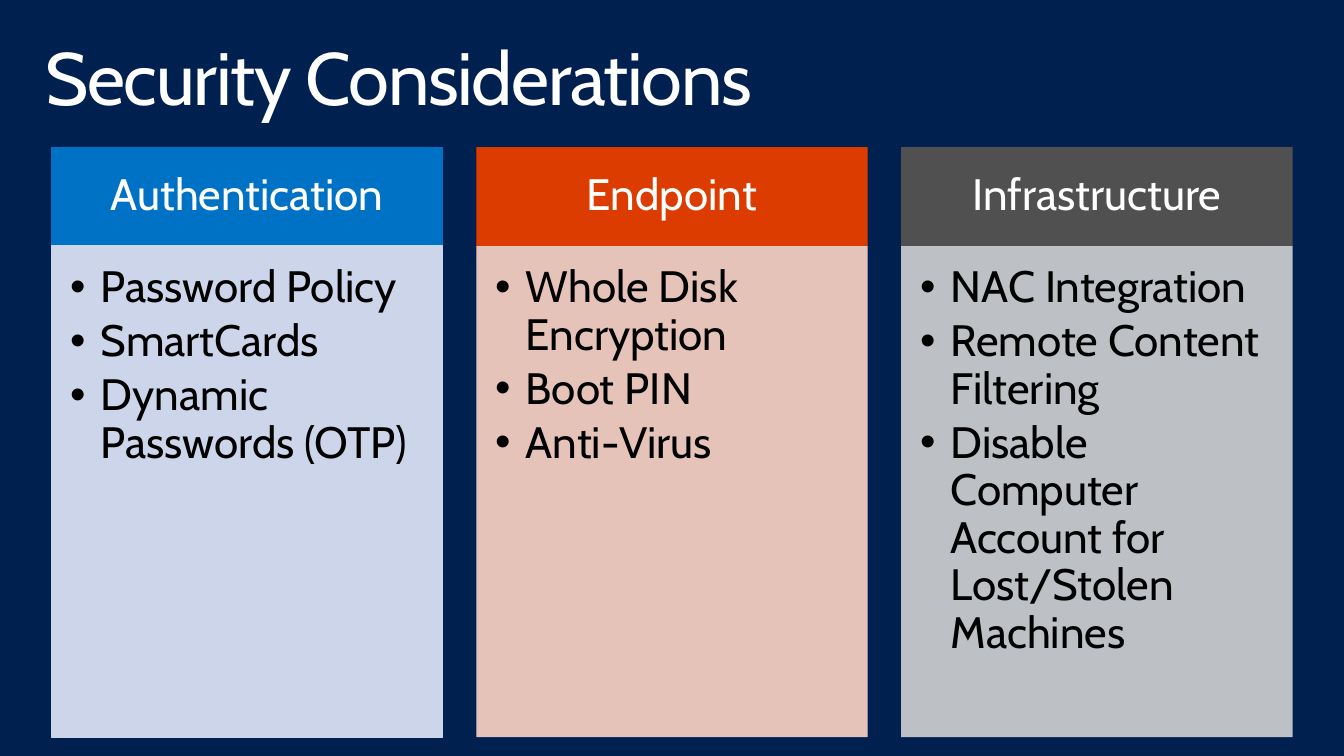
from lxml import etree
from pptx import Presentation
from pptx import util as u
from pptx.dml.color import RGBColor
from pptx.enum import shapes, text
from pptx.oxml.ns import qn

PX = 9144  # 100 px to the inch
FONT = "Cabin"
NAVY = RGBColor(0x00, 0x20, 0x50)
WHITE = RGBColor(0xFF, 0xFF, 0xFF)
BLACK = RGBColor(0x00, 0x00, 0x00)
BLUE = RGBColor(0x00, 0x72, 0xC6)
PALE_BLUE = RGBColor(0xCC, 0xD5, 0xEA)
ORANGE = RGBColor(0xDC, 0x3C, 0x00)
PALE_ORANGE = RGBColor(0xFF, 0xD5, 0xC5)
GRAY = RGBColor(0x50, 0x50, 0x50)
PALE_GRAY = RGBColor(0xD2, 0xD2, 0xD2)

# Heading, heading fill, body fill, body opacity in percent, outlined, items
COLUMNS = [
    ("Authentication", BLUE, PALE_BLUE, 100, True,
     ["Password Policy", "SmartCards", "Dynamic Passwords (OTP)"]),
    ("Endpoint", ORANGE, PALE_ORANGE, 90, False,
     ["Whole Disk Encryption", "Boot PIN", "Anti-Virus"]),
    ("Infrastructure", GRAY, PALE_GRAY, 90, False,
     ["NAC Integration", "Remote Content Filtering",
      "Disable Computer Account for Lost/Stolen Machines"]),
]
LEFT, PITCH, WIDTH = 52, 430, 396
HEAD_TOP, HEAD_HEIGHT = 149, 100
BODY_TOP, BODY_HEIGHT = HEAD_TOP + HEAD_HEIGHT, 497


def add_panel(left, top, height, color, outlined, insets):
    panel = page.shapes.add_shape(shapes.MSO_SHAPE.RECTANGLE, left * PX,
                                  top * PX, WIDTH * PX, height * PX)
    panel.shadow.inherit = False
    panel.fill.solid()
    panel.fill.fore_color.rgb = color
    if outlined:
        panel.line.color.rgb = color
        panel.line.width = u.Pt(0.85)
    else:
        panel.line.fill.background()
    frame = panel.text_frame
    frame.word_wrap = True
    (frame.margin_left, frame.margin_top,
     frame.margin_right, frame.margin_bottom) = [inset * PX for inset in insets]
    return panel


def add_text(para, words, size, color):
    para.line_spacing = 0.9
    span = para.add_run()
    span.text = words
    span.font.name = FONT
    span.font.size = u.Pt(size)
    span.font.color.rgb = color
    return span


deck = Presentation()
deck.slide_width, deck.slide_height = 1360 * PX, 765 * PX
page = deck.slides.add_slide(deck.slide_layouts[6])
page.background.fill.solid()
page.background.fill.fore_color.rgb = NAVY

# Title
title = page.shapes.add_textbox(30 * PX, 32 * PX, 1300 * PX, 100 * PX)
frame = title.text_frame
frame.word_wrap = True
frame.margin_left = frame.margin_right = 16 * PX
frame.margin_top = frame.margin_bottom = 10 * PX
span = add_text(frame.paragraphs[0], "Security Considerations", 54, WHITE)
span.font._element.set("spc", "-100")

# Three columns, each a heading above a bulleted panel
for index, (heading, dark, pale, opacity, outlined, items) in enumerate(COLUMNS):
    left = LEFT + index * PITCH

    head = add_panel(left, HEAD_TOP, HEAD_HEIGHT, dark, outlined, (25, 14, 25, 14))
    head.text_frame.vertical_anchor = text.MSO_ANCHOR.MIDDLE
    para = head.text_frame.paragraphs[0]
    para.alignment = text.PP_ALIGN.CENTER
    add_text(para, heading, 32, WHITE)

    body = add_panel(left, BODY_TOP, BODY_HEIGHT, pale, outlined, (19, 19, 25, 28))
    if opacity < 100:
        tint = body.fill._xPr.find(qn("a:solidFill"))[0]
        etree.SubElement(tint, qn("a:alpha"), val=str(opacity * 1000))
    frame = body.text_frame
    frame.vertical_anchor = text.MSO_ANCHOR.TOP
    for number, item in enumerate(items):
        para = frame.add_paragraph() if number else frame.paragraphs[0]
        para.alignment = text.PP_ALIGN.LEFT
        add_text(para, item, 32, BLACK)
        para.space_after = u.Pt(4.8)
        # Bullet with hanging indent
        props = para._p.get_or_add_pPr()
        props.set("marL", str(31 * PX))
        props.set("indent", str(-31 * PX))
        etree.SubElement(props, qn("a:buFont"), typeface="Arial")
        etree.SubElement(props, qn("a:buChar"), char="•")

deck.save("out.pptx")
